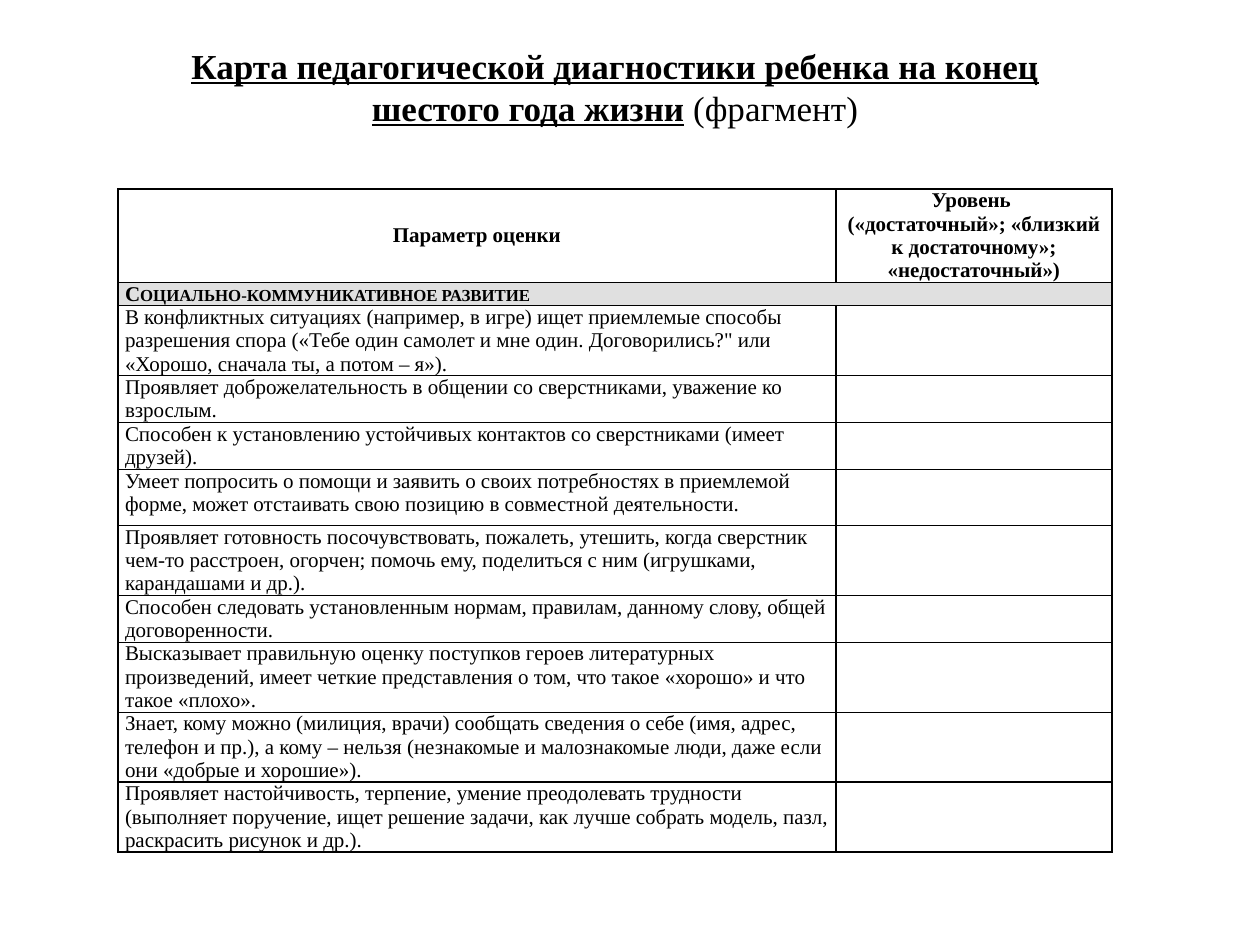
from dataclasses import dataclass

from lxml.etree import SubElement
from pptx import Presentation
from pptx.dml.color import RGBColor
from pptx.enum.text import MSO_ANCHOR as Anchor, MSO_AUTO_SIZE as AutoSize, PP_ALIGN as Align
from pptx.oxml.ns import qn
from pptx.util import Emu, Pt

PX = 914400 // 126
TITLE_ONLY = 5


@dataclass(frozen=True)
class Theme:
    font: str = "Times New Roman"
    ink: RGBColor = RGBColor(0, 0, 0)
    section_fill: RGBColor = RGBColor(0xE0, 0xE0, 0xE0)
    title_size: int = 20
    table_size: int = 12
    border: int = 1


HEADINGS = [
    "Параметр оценки",
    "Уровень \v(«достаточный»; «близкий к достаточному»; «недостаточный»)",
]
HEADING_HEIGHT = 93
SECTION = "Социально-коммуникативное развитие"
SECTION_HEIGHT = 23
CRITERIA = [
    ("В конфликтных ситуациях (например, в игре) ищет приемлемые способы разрешения спора "
     "(«Тебе один самолет и мне один. Договорились?\" или «Хорошо, сначала ты, а потом – я»).", 70),
    ("Проявляет доброжелательность в общении со сверстниками, уважение ко взрослым.", 47),
    ("Способен к установлению устойчивых контактов со сверстниками (имеет друзей).", 47),
    ("Умеет попросить о помощи и заявить о своих потребностях в приемлемой форме, "
     "может отстаивать свою позицию в совместной деятельности.", 56),
    ("Проявляет готовность посочувствовать, пожалеть, утешить, когда сверстник чем-то "
     "расстроен, огорчен; помочь ему, поделиться с ним (игрушками, карандашами и др.).", 70),
    ("Способен следовать установленным нормам, правилам, данному слову, "
     "общей договоренности.", 46),
    ("Высказывает правильную оценку поступков героев литературных произведений, имеет "
     "четкие представления о том, что такое «хорошо» и что такое «плохо».", 70),
    ("Знает, кому можно (милиция, врачи) сообщать сведения о себе (имя, адрес, телефон "
     "и пр.), а кому – нельзя (незнакомые и малознакомые люди, даже если они «добрые "
     "и хорошие»).", 70),
    ("Проявляет настойчивость, терпение, умение преодолевать трудности (выполняет "
     "поручение, ищет решение задачи, как лучше собрать модель, пазл, раскрасить "
     "рисунок и др.).", 70),
]


def px(*lengths):
    return [Emu(length * PX) for length in lengths]


class SlideBuilder:
    def __init__(self, slide, theme):
        self.slide = slide
        self.theme = theme

    def style(self, paragraph, size, bold=None, align=Align.LEFT):
        paragraph.alignment = align
        font = paragraph.font
        font.name, font.size, font.bold = self.theme.font, Pt(size), bold
        font.color.rgb = self.theme.ink

    def title(self, heading, remark, left, top, width, height):
        title = self.slide.shapes.title
        title.left, title.top, title.width, title.height = px(left, top, width, height)
        frame = title.text_frame
        frame.auto_size = AutoSize.NONE
        frame.vertical_anchor = Anchor.TOP
        frame.margin_left, frame.margin_right, frame.margin_top = px(13, 13, 24)
        paragraph = frame.paragraphs[0]
        self.style(paragraph, self.theme.title_size, align=Align.CENTER)
        for text, strong in ((heading, True), (remark, False)):
            run = paragraph.add_run()
            run.text = text
            run.font.bold = run.font.underline = strong

    def table(self, left, top, widths, heights):
        frame = self.slide.shapes.add_table(
            len(heights), len(widths), *px(left, top, sum(widths), sum(heights)))
        table = frame.table
        table.first_row = table.horz_banding = False
        for column, width in zip(table.columns, px(*widths)):
            column.width = width
        for row, height in zip(table.rows, px(*heights)):
            row.height = height
        return table

    def cell(self, cell, text="", bold=False, align=Align.LEFT, anchor=Anchor.TOP, fill=None):
        cell.margin_left, cell.margin_right, cell.margin_top, cell.margin_bottom = px(7, 7, 0, 0)
        cell.vertical_anchor = anchor
        self.borders(cell)
        if fill is None:
            cell.fill.background()
        else:
            cell.fill.solid()
            cell.fill.fore_color.rgb = fill
        paragraph = cell.text_frame.paragraphs[0]
        paragraph.text = text
        self.style(paragraph, self.theme.table_size, bold, align)
        return paragraph

    def borders(self, cell):
        properties = cell._tc.get_or_add_tcPr()
        for side in ("a:lnL", "a:lnR", "a:lnT", "a:lnB"):
            line = SubElement(properties, qn(side), w=str(Pt(self.theme.border)))
            fill = SubElement(line, qn("a:solidFill"))
            SubElement(fill, qn("a:srgbClr"), val=str(self.theme.ink))


def main():
    theme = Theme()
    deck = Presentation()
    deck.slide_width, deck.slide_height = px(1260, 945)
    builder = SlideBuilder(deck.slides.add_slide(deck.slide_layouts[TITLE_ONLY]), theme)

    builder.title("Карта педагогической диагностики ребенка на конец шестого года жизни",
                  " (фрагмент)", 118, 20, 994, 165)

    heights = [HEADING_HEIGHT, SECTION_HEIGHT] + [height for _, height in CRITERIA]
    table = builder.table(118, 189, [718, 276], heights)
    for column, heading in enumerate(HEADINGS):
        builder.cell(table.cell(0, column), heading, True, Align.CENTER, Anchor.MIDDLE)

    section = builder.cell(table.cell(1, 0), SECTION, True, fill=theme.section_fill)
    section.runs[0]._r.get_or_add_rPr().set("cap", "small")
    builder.cell(table.cell(1, 1), fill=theme.section_fill)
    table.cell(1, 0).merge(table.cell(1, 1))

    for row, (criterion, _) in enumerate(CRITERIA, start=2):
        builder.cell(table.cell(row, 0), criterion)
        builder.cell(table.cell(row, 1))

    deck.save("out.pptx")


if __name__ == "__main__":
    main()
